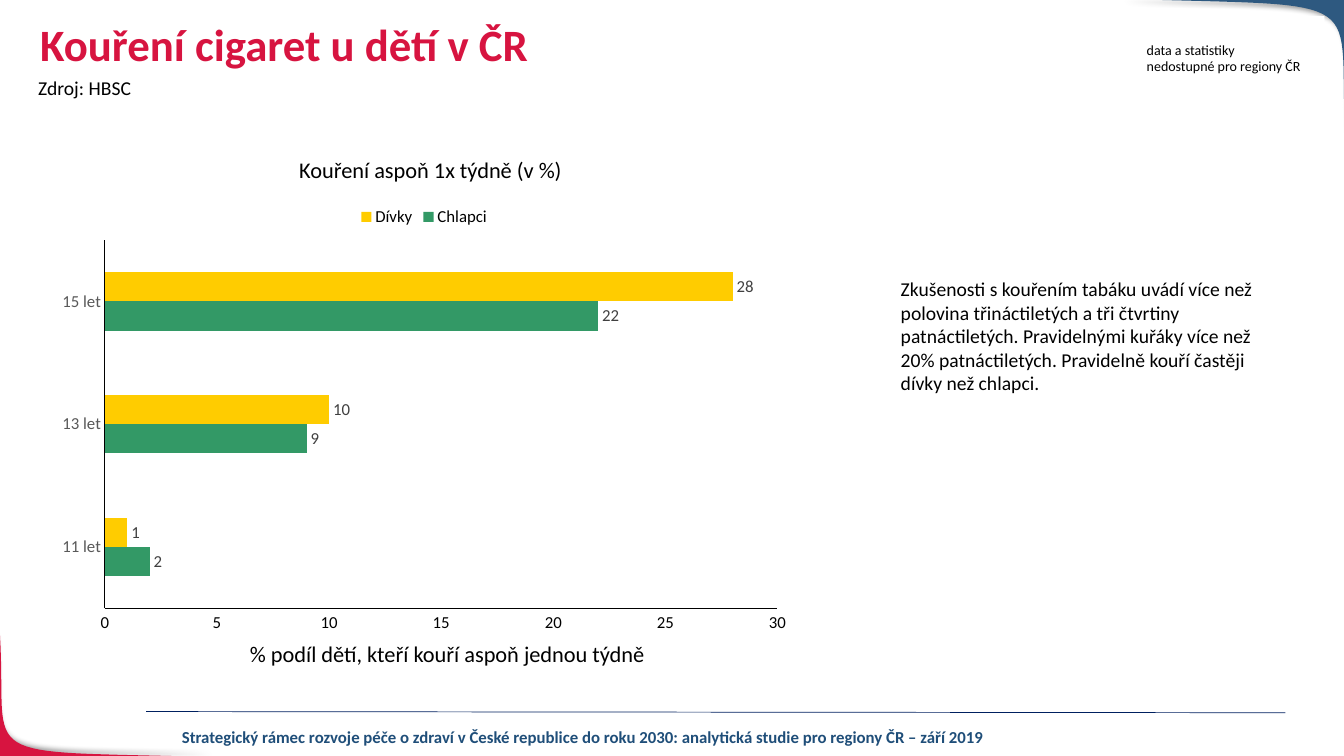
from lxml import etree
from pptx import Presentation
from pptx.chart.data import CategoryChartData
from pptx.dml.color import RGBColor
from pptx.enum.chart import XL_CHART_TYPE, XL_LABEL_POSITION, XL_LEGEND_POSITION, XL_TICK_MARK
from pptx.enum.shapes import MSO_CONNECTOR, MSO_SHAPE
from pptx.enum.text import PP_ALIGN
from pptx.oxml import parse_xml
from pptx.oxml.ns import qn
from pptx.util import Cm, Pt

BAR_CLUSTERED = XL_CHART_TYPE.BAR_CLUSTERED
OUTSIDE_END = XL_LABEL_POSITION.OUTSIDE_END
LEGEND_TOP = XL_LEGEND_POSITION.TOP
NO_TICK = XL_TICK_MARK.NONE
STRAIGHT = MSO_CONNECTOR.STRAIGHT
RECTANGLE = MSO_SHAPE.RECTANGLE
LEFT, CENTER = PP_ALIGN.LEFT, PP_ALIGN.CENTER

FONT = "Calibri"
BLACK = RGBColor(0x00, 0x00, 0x00)
WHITE = RGBColor(0xFF, 0xFF, 0xFF)
RED = RGBColor(0xD7, 0x14, 0x40)
BLUE = RGBColor(0x2E, 0x59, 0x80)
NAVY = RGBColor(0x00, 0x20, 0x60)
FOOTER_BLUE = RGBColor(0x1F, 0x4E, 0x79)
GREEN = RGBColor(0x33, 0x99, 0x66)
YELLOW = RGBColor(0xFF, 0xCC, 0x00)
AXIS_GREY = RGBColor(0x59, 0x59, 0x59)
LABEL_GREY = RGBColor(0x40, 0x40, 0x40)

SHADOW = (
    '<a:effectLst xmlns:a="http://schemas.openxmlformats.org/drawingml/2006/main">'
    '<a:outerShdw blurRad="50800" dist="38100" dir="{}" algn="tl" rotWithShape="0">'
    '<a:srgbClr val="000000"><a:alpha val="40000"/></a:srgbClr>'
    '</a:outerShdw></a:effectLst>'
)

prs = Presentation()
prs.slide_width, prs.slide_height = Cm(33.87), Cm(19.05)
slide = prs.slides.add_slide(prs.slide_layouts[6])
shapes = slide.shapes


def style_font(font, size, color, bold=False):
    font.name = FONT
    font.size = Pt(size)
    font.color.rgb = color
    font.bold = bold


def add_text(box, lines, size, color=BLACK, bold=False, align=LEFT):
    frame = shapes.add_textbox(*map(Cm, box)).text_frame
    frame.word_wrap = True
    for index, line in enumerate(lines):
        paragraph = frame.paragraphs[0] if index == 0 else frame.add_paragraph()
        paragraph.alignment = align
        run = paragraph.add_run()
        run.text = line
        style_font(run.font, size, color, bold)
    return frame


CURVE_STEPS = 32
corners = [
    ([(5.41, 19.08), (-0.86, 18.9), (0.2, 19.28), (0, 16)], (-0.03, 19.08), RED, 225),
    ([(28.22, -0.03), (34.8, 0.18), (33.68, -0.25), (33.91, 3.61)], (33.91, -0.03), BLUE, 45),
]
for controls, tip, color, shadow_angle in corners:
    outline = []
    for step in range(CURVE_STEPS + 1):
        t = step / CURVE_STEPS
        weights = ((1 - t) ** 3, 3 * t * (1 - t) ** 2, 3 * t ** 2 * (1 - t), t ** 3)
        outline.append(tuple(
            Cm(sum(w * point[axis] for w, point in zip(weights, controls)))
            for axis in (0, 1)
        ))
    outline.append((Cm(tip[0]), Cm(tip[1])))
    builder = shapes.build_freeform(*outline[0], scale=1.0)
    builder.add_line_segments(outline[1:], close=True)
    corner = builder.convert_to_shape()
    corner.fill.solid()
    corner.fill.fore_color.rgb = color
    corner.line.fill.background()
    corner._element.spPr.append(parse_xml(SHADOW.format(shadow_angle * 60000)))

footer_rule = shapes.add_connector(STRAIGHT, Cm(3.68), Cm(17.93), Cm(32.39), Cm(17.96))
footer_rule.line.color.rgb = NAVY
footer_rule.line.width = Pt(0.5)
etree.SubElement(footer_rule._element.spPr, qn("a:effectLst"))

add_text(
    (3.99, 18.19, 21.41, 0.76),
    ["Strategický rámec rozvoje péče o zdraví v České republice do roku 2030: "
     "analytická studie pro regiony ČR – září 2019"],
    12, FOOTER_BLUE, True, CENTER,
)
add_text((0.71, 1.8, 30.66, 0.86), ["Zdroj: HBSC"], 14)
add_text(
    (22.45, 6.86, 9.91, 8.51),
    ["Zkušenosti s kouřením tabáku uvádí více než polovina třináctiletých a tři čtvrtiny "
     "patnáctiletých. Pravidelnými kuřáky více než 20% patnáctiletých. Pravidelně kouří "
     "častěji dívky než chlapci."],
    14,
)

smoking = CategoryChartData(number_format="0")
smoking.categories = ["11 let", "13 let", "15 let"]
smoking.add_series("Chlapci", (2, 9, 22))
smoking.add_series("Dívky", (1, 10, 28))
chart = shapes.add_chart(
    BAR_CLUSTERED, Cm(1.19), Cm(4.93), Cm(19), Cm(11.23), smoking
).chart
style_font(chart.font, 10, BLACK)
chart.has_title = False
chart.has_legend = True
chart.legend.position = LEGEND_TOP
chart.legend.include_in_layout = False
style_font(chart.legend.font, 12, BLACK)

for axis, color in ((chart.category_axis, AXIS_GREY), (chart.value_axis, BLACK)):
    axis.has_major_gridlines = False
    axis.major_tick_mark = axis.minor_tick_mark = NO_TICK
    axis.format.line.color.rgb = BLACK
    axis.format.line.width = Pt(0.75)
    style_font(axis.tick_labels.font, 12, color)
chart.value_axis.minimum_scale = 0
chart.value_axis.maximum_scale = 30
chart.value_axis.major_unit = 5

bars = chart.plots[0]
bars.gap_width = 219
bars.overlap = 0
bars.vary_by_categories = False
for series, color in zip(bars.series, (GREEN, YELLOW)):
    series.format.fill.solid()
    series.format.fill.fore_color.rgb = color
    labels = series.data_labels
    labels.show_value = True
    labels.number_format = "0"
    labels.number_format_is_linked = False
    labels.position = OUTSIDE_END
    style_font(labels.font, 12, LABEL_GREY)

add_text((7.29, 3.81, 8, 0.94), ["Kouření aspoň 1x týdně (v %)"], 16)
add_text((6.05, 16, 12.6, 0.94), ["% podíl dětí, kteří kouří aspoň jednou týdně"], 16)
title = add_text((0.76, 0.46, 29.21, 1.75), ["Kouření cigaret u dětí v ČR"], 32, RED, True)
title.paragraphs[0].line_spacing = 0.9

note_panel = shapes.add_shape(RECTANGLE, Cm(27.94), Cm(0.41), Cm(5.44), Cm(1.55))
note_panel.shadow.inherit = False
note_panel.fill.solid()
note_panel.fill.fore_color.rgb = WHITE
note_panel.line.fill.background()
note = add_text(
    (27.94, 0.91, 5.92, 1.12), ["data a statistiky", "nedostupné pro regiony ČR"], 10
)
note.margin_left = Cm(0.96)

prs.save("out.pptx")
